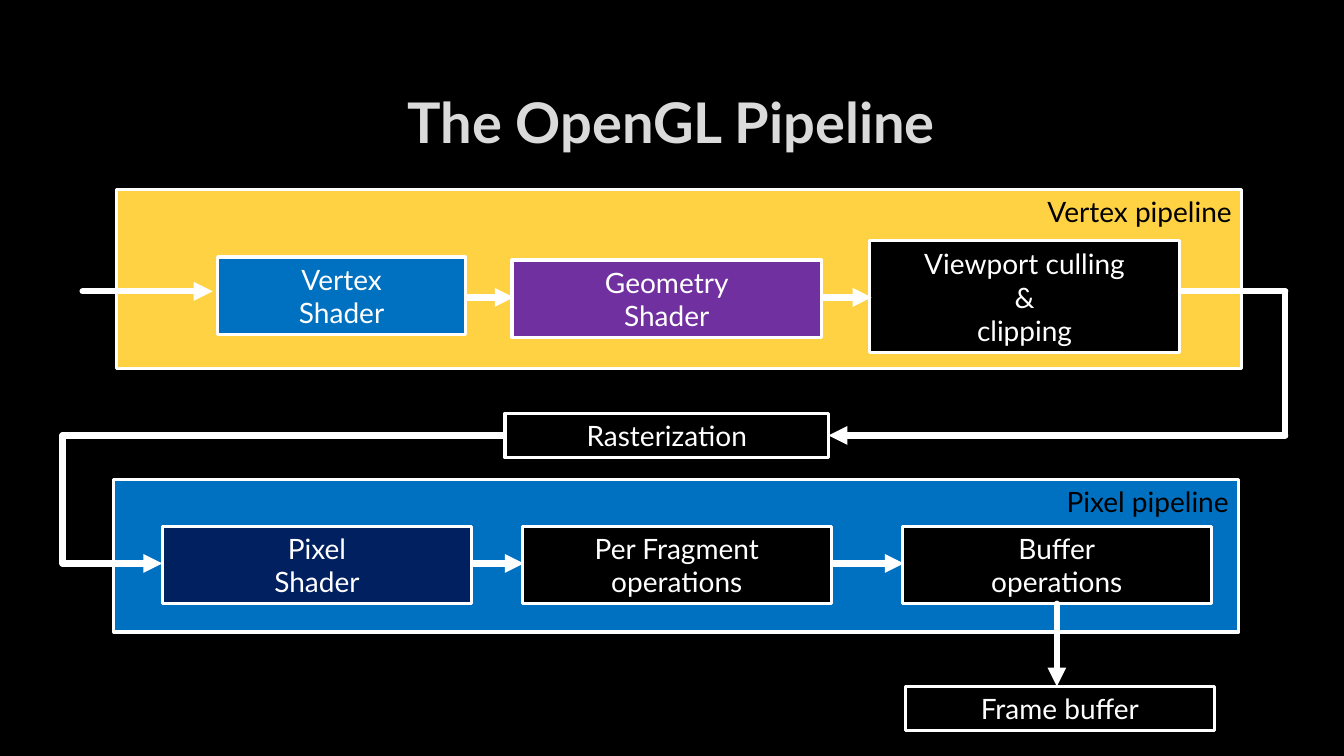
import itertools

import pptx
import pptx.dml.color
import pptx.enum.shapes
import pptx.enum.text
import pptx.oxml
import pptx.oxml.ns
import pptx.util

COLUMNS, ROWS = 160, 90
SLIDE_WIDTH, SLIDE_HEIGHT = pptx.util.Inches(13.333), pptx.util.Inches(7.5)
FONT = "Lato"
WHITE, BLACK, BLUE = "FFFFFF", "000000", "0070C0"
ALIGN = pptx.enum.text.PP_ALIGN
ANCHOR = pptx.enum.text.MSO_ANCHOR
STAGE_WIDTH, STAGE_HEIGHT, LINE_BOX_HEIGHT = 36.84, 9.24, 5.28
NUDGE = 0.2


def paint(color_format, value):
    color_format.rgb = pptx.dml.color.RGBColor.from_string(value)


def across(columns):
    return round(SLIDE_WIDTH * columns / COLUMNS)


def down(rows):
    return round(SLIDE_HEIGHT * rows / ROWS)


def place(box):
    left, top, width, height = box
    return across(left), down(top), across(width), down(height)


def write(frame, lines, size, color, align, anchor, bold=False):
    frame.word_wrap = True
    frame.vertical_anchor = anchor
    frame.text = "\n".join(lines)
    for paragraph in frame.paragraphs:
        paragraph.alignment = align
        paragraph.font.name = FONT
        paragraph.font.size = pptx.util.Pt(size)
        paragraph.font.bold = bold
        paint(paragraph.font.color, color)


def draw_box(slide, box, lines, fill=BLACK, color=WHITE, align=ALIGN.CENTER, anchor=ANCHOR.MIDDLE):
    rectangle = slide.shapes.add_shape(pptx.enum.shapes.MSO_SHAPE.RECTANGLE, *place(box))
    rectangle.shadow.inherit = False
    rectangle.fill.solid()
    paint(rectangle.fill.fore_color, fill)
    rectangle.line.width = pptx.util.Pt(2.25)
    paint(rectangle.line.color, WHITE)
    write(rectangle.text_frame, lines, 20, color, align, anchor)


def draw_flow(slide, *points, arrow=True):
    for start, end in itertools.pairwise(points):
        segment = slide.shapes.add_connector(
            pptx.enum.shapes.MSO_CONNECTOR.STRAIGHT,
            across(start[0]), down(start[1]), across(end[0]), down(end[1]))
        segment.line.width = pptx.util.Pt(4.5)
        paint(segment.line.color, WHITE)
        stroke = segment.line._get_or_add_ln()
        stroke.set("cap", "rnd")
        pptx.oxml.ns.qn("a:round")
        stroke.append(pptx.oxml.parse_xml(f'<a:round {pptx.oxml.ns.nsdecls("a")}/>'))
        if arrow and end == points[-1]:
            stroke.append(pptx.oxml.parse_xml(
                f'<a:tailEnd {pptx.oxml.ns.nsdecls("a")} type="triangle"/>'))
        stroke.getparent().append(pptx.oxml.parse_xml(
            f'<a:effectLst {pptx.oxml.ns.nsdecls("a")}/>'))


def draw_title(slide, box, title):
    heading = slide.shapes.add_textbox(*place(box))
    write(heading.text_frame, [title], 40, "DADADA", ALIGN.CENTER, ANCHOR.MIDDLE, bold=True)


def draw_panel(slide, box, label, fill, stages, flow_row):
    left, top = box[:2]
    draw_box(slide, box, [label], fill, BLACK, ALIGN.RIGHT, ANCHOR.TOP)
    stage_boxes = []
    for (column, row, width, height), lines, stage_fill in stages:
        stage_box = (left + column, top + row, width, height)
        draw_box(slide, stage_box, lines, stage_fill)
        stage_boxes.append(stage_box)
    for stage, following in itertools.pairwise(stage_boxes):
        draw_flow(slide, (stage[0] + stage[2] + NUDGE, top + flow_row),
                  (following[0] + NUDGE, top + flow_row))
    return stage_boxes


def draw_pipeline(slide):
    vertex_panel = (13.92, 22.56, 133.92, 21.36)
    pixel_panel = (13.56, 57.12, 133.92, 18.12)
    rasterization = (60.12, 49.2, 38.52, LINE_BOX_HEIGHT)
    frame_buffer = (107.76, 81.72, STAGE_WIDTH, LINE_BOX_HEIGHT)
    entry_row, raster_row, pixel_row = 34.68, 51.84, 67.08
    left_turn, right_turn = 7.44, 153

    vertex_stages = draw_panel(slide, vertex_panel, "Vertex pipeline", "FFD243", [
        ((12, 8.04, 29.52, STAGE_HEIGHT), ["Vertex", "Shader"], BLUE),
        ((47.04, 8.4, STAGE_WIDTH, STAGE_HEIGHT), ["Geometry", "Shader"], "7030A0"),
        ((89.64, 6.12, STAGE_WIDTH, 13.32), ["Viewport culling", "&", "clipping"], BLACK),
    ], 12.84)
    pixel_stages = draw_panel(slide, pixel_panel, "Pixel pipeline", BLUE, [
        ((column, 5.52, STAGE_WIDTH, STAGE_HEIGHT), lines, fill)
        for column, lines, fill in [
            (5.76, ["Pixel", "Shader"], "002060"),
            (48.6, ["Per Fragment", "operations"], BLACK),
            (93.84, ["Buffer", "operations"], BLACK),
        ]
    ], pixel_row - pixel_panel[1])

    clipping, buffer = vertex_stages[-1], pixel_stages[-1]
    buffer_center = buffer[0] + buffer[2] / 2
    draw_flow(slide, (9.84, entry_row), (25.32, entry_row))
    draw_flow(slide, (clipping[0] + clipping[2] + NUDGE, entry_row), (right_turn, entry_row),
              (right_turn, raster_row), (rasterization[0] + rasterization[2], raster_row))
    draw_flow(slide, (rasterization[0], raster_row), (left_turn, raster_row),
              (left_turn, pixel_row), (pixel_stages[0][0], pixel_row))
    draw_flow(slide, (buffer_center, buffer[1] + buffer[3]), (buffer_center, frame_buffer[1]))
    draw_box(slide, rasterization, ["Rasterization"])
    draw_box(slide, frame_buffer, ["Frame buffer"])


def main():
    deck = pptx.Presentation()
    deck.slide_width, deck.slide_height = SLIDE_WIDTH, SLIDE_HEIGHT
    slide = deck.slides.add_slide(deck.slide_layouts[6])
    slide.background.fill.solid()
    paint(slide.background.fill.fore_color, BLACK)
    draw_pipeline(slide)
    draw_title(slide, (12, 8.04, 135.84, 12.72), "The OpenGL Pipeline")
    deck.save("out.pptx")


if __name__ == "__main__":
    main()
